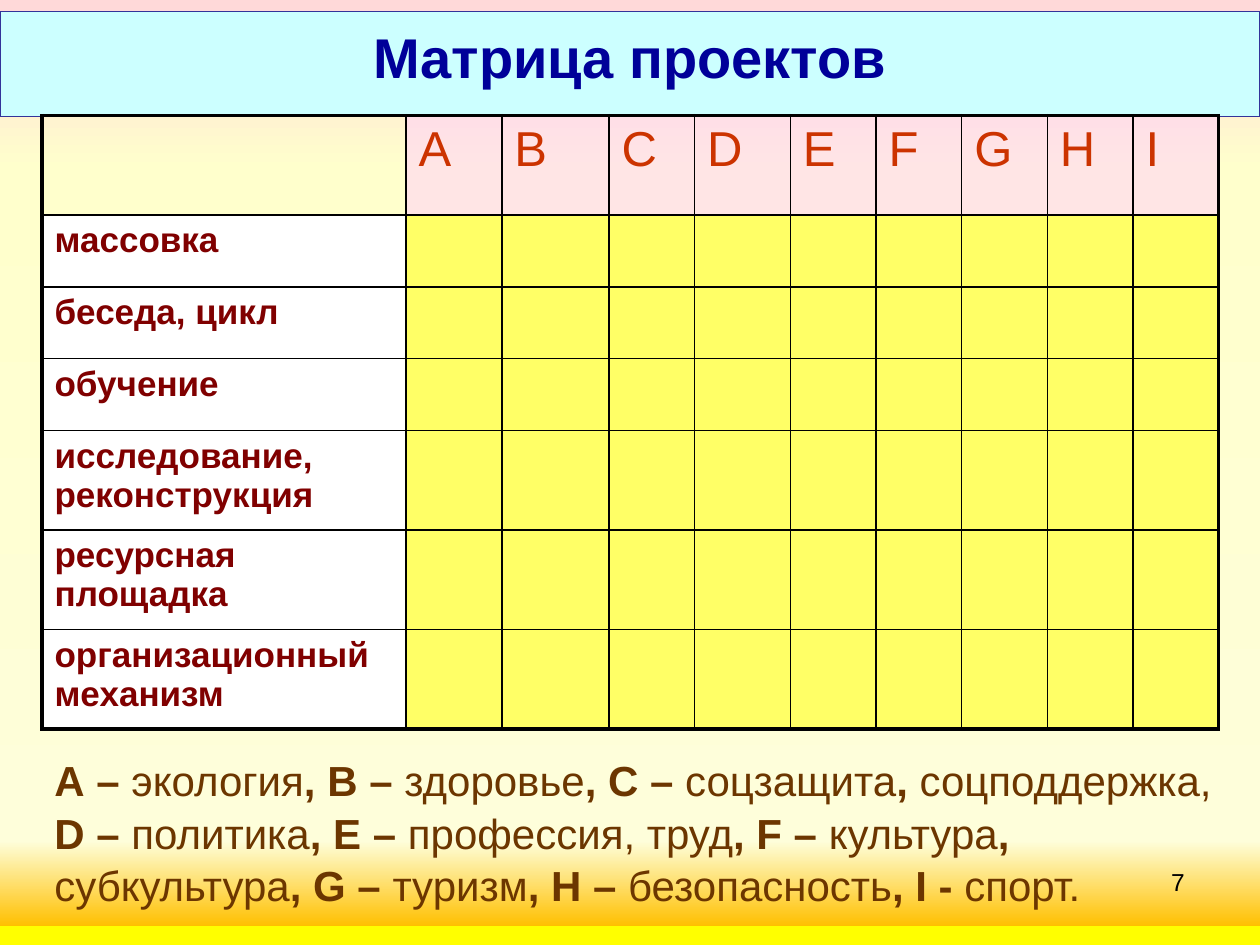
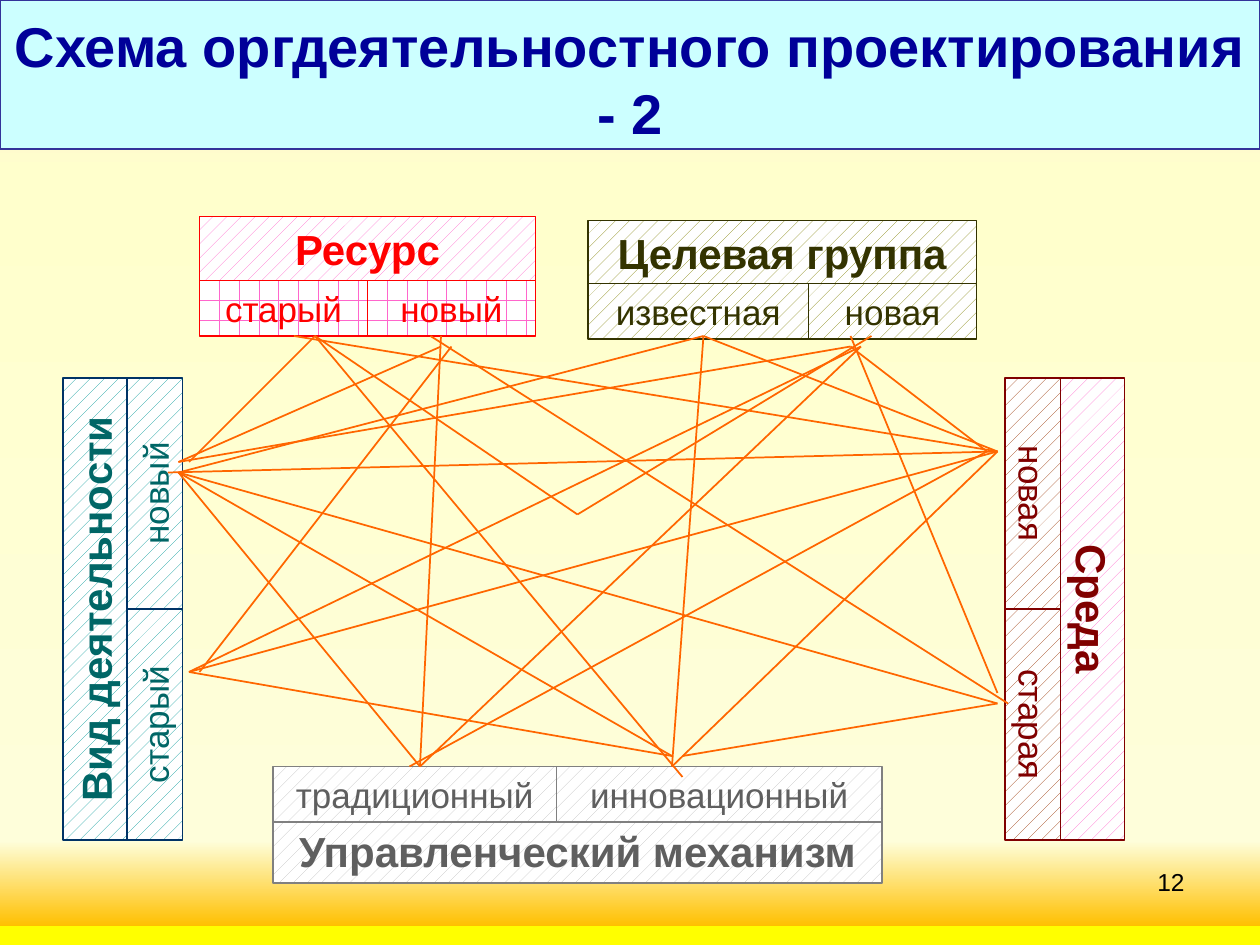
from lxml import etree
from pptx import Presentation
from pptx.dml.color import RGBColor as RGB
from pptx.enum.dml import MSO_PATTERN as PAT
from pptx.enum.shapes import MSO_CONNECTOR as CONN, MSO_SHAPE as SHAPE
from pptx.enum.text import MSO_ANCHOR as ANCHOR, MSO_AUTO_SIZE as AUTO, PP_ALIGN as ALIGN
from pptx.oxml import parse_xml
from pptx.oxml.ns import nsdecls, qn
from pptx.util import Inches, Pt

# Colours
WHITE, BLACK = RGB(0xFF, 0xFF, 0xFF), RGB(0, 0, 0)
CYAN, INDIGO, NAVY = RGB(0xCC, 0xFF, 0xFF), RGB(0x33, 0x33, 0x99), RGB(0, 0, 0x99)
PINK, YELLOW = RGB(0xFF, 0xCC, 0xFF), RGB(0xFF, 0xFF, 0x66)
RUST, MAROON, BROWN = RGB(0xCC, 0x33, 0), RGB(0x80, 0, 0), RGB(0x6C, 0x36, 0)
RED, ROSE, ORANGE = RGB(0xFF, 0, 0), RGB(0xFF, 0x66, 0xCC), RGB(0xFF, 0x66, 0)
OLIVE, DARK_OLIVE = RGB(0x80, 0x80, 0), RGB(0x33, 0x33, 0)
TEAL, DARK_TEAL, BLUE = RGB(0, 0x99, 0x99), RGB(0, 0x66, 0x66), RGB(0, 0x33, 0x66)
SIENNA = RGB(0x99, 0x33, 0)
SILVER, GRAY, DARK_GRAY = RGB(0xC0, 0xC0, 0xC0), RGB(0x80, 0x80, 0x80), RGB(0x5F, 0x5F, 0x5F)
BG_STOPS = [(1, "FFD9D9"), (18, "FFFFCC"), (89, "FEFEDA"), (98, "FFC000"), (98, "FFFF00")]

prs = Presentation()
prs.slide_width, prs.slide_height = Inches(10), Inches(7.5)
U = prs.slide_width / 120  # grid of 120 columns by 90 rows


def grid(*units):
    return [round(u * U) for u in units]


def style(p, size, color, bold=False, align=ALIGN.LEFT):
    p.alignment = align
    for r in p.runs:
        r.font.name, r.font.size, r.font.bold = "Arial", Pt(size), bold
        r.font.color.rgb = color


# Shared background
fill = prs.slide_master.background.fill
fill.gradient()
fill.gradient_angle = 270
stops = "".join(f'<a:gs pos="{pos * 1000}"><a:srgbClr val="{c}"/></a:gs>' for pos, c in BG_STOPS)
gs_list = next(prs.slide_master.element.iter(qn("a:gsLst")))
gs_list.getparent().replace(gs_list, parse_xml(f'<a:gsLst {nsdecls("a")}>{stops}</a:gsLst>'))

# Title bands and slide numbers
slides = []
for title, top, height, number in [
    ("Матрица проектов", 1.1, 10, "7"),
    ("Схема оргдеятельностного проектирования - 2", 0, 14.2, "12"),
]:
    s = prs.slides.add_slide(prs.slide_layouts[5])
    slides.append(s)
    sp = s.shapes.title
    sp.left, sp.top, sp.width, sp.height = grid(0, top, 120, height)
    sp.fill.solid()
    sp.fill.fore_color.rgb = CYAN
    sp.line.color.rgb, sp.line.width = INDIGO, Pt(0.75)
    tf = sp.text_frame
    tf.text = title
    tf.word_wrap, tf.auto_size, tf.vertical_anchor = True, AUTO.NONE, ANCHOR.TOP
    tf.margin_top = Inches(0.09)
    style(tf.paragraphs[0], 32, NAVY, True, ALIGN.CENTER)

    tf = s.shapes.add_textbox(*grid(86, 82, 28, 6.2)).text_frame
    tf.word_wrap = True
    tf.text = number
    style(tf.paragraphs[0], 14, BLACK, align=ALIGN.RIGHT)

matrix, scheme = slides

# Matrix table
kinds = ["массовка", "беседа, цикл", "обучение", "исследование, реконструкция",
         "ресурсная площадка", "организационный механизм"]
col_widths = [2.89, 0.76, 0.85, 0.68, 0.76] + [0.68] * 5
row_heights = [0.79] + [0.57] * 3 + [0.79] * 3
n_rows, n_cols = len(row_heights), len(col_widths)
tbl = matrix.shapes.add_table(n_rows, n_cols, *grid(4, 11, 112, 58.4)).table
tbl.first_row = tbl.horz_banding = False
for col, width in zip(tbl.columns, col_widths):
    col.width = Inches(width)
for row, height in zip(tbl.rows, row_heights):
    row.height = Inches(height)

for i in range(n_rows):
    for j in range(n_cols):
        cell = tbl.cell(i, j)
        tcPr = cell._tc.get_or_add_tcPr()
        outer = {"L": j == 0, "R": j == n_cols - 1, "T": i == 0, "B": i == n_rows - 1}
        for side, is_outer in outer.items():
            width = Pt(2.25 if is_outer else 1)
            tcPr.append(parse_xml(
                f'<a:ln{side} {nsdecls("a")} w="{width}"><a:solidFill>'
                f'<a:srgbClr val="{BLACK}"/></a:solidFill></a:ln{side}>'))
        if i == j == 0:
            cell.fill.background()
            continue
        cell.fill.solid()
        cell.fill.fore_color.rgb = PINK if i == 0 else WHITE if j == 0 else YELLOW
        if i == 0:
            cell.text = "ABCDEFGНI"[j - 1]
            style(cell.text_frame.paragraphs[0], 28, RUST)
            clr = tcPr.find(qn("a:solidFill"))[0]
            etree.SubElement(clr, qn("a:alpha")).set("val", "50000")
        elif j == 0:
            cell.text = kinds[i - 1]
            style(cell.text_frame.paragraphs[0], 20, MAROON, True)

# Legend: bold and regular runs alternate
legend = [
    ["А – ", "экология", ", В – ", "здоровье", ", С – ", "соцзащита", ", ", "соцподдержка,"],
    ["D – ", "политика", ", E – ", "профессия, труд", ", F – ", "культура", ", ", "субкультура",
     ", G – ", "туризм", ", Н – ", "безопасность", ", I - ", "спорт."],
]
tf = matrix.shapes.add_textbox(*grid(4, 71, 113, 15.6)).text_frame
tf.word_wrap = True
for k, parts in enumerate(legend):
    p = tf.add_paragraph() if k else tf.paragraphs[0]
    p.line_spacing = 1.05
    for part in parts:
        p.add_run().text = part
    style(p, 24, BROWN)
    for r in p.runs[::2]:
        r.font.bold = True

# Scheme blocks: a bold head and two halves, as (text, column, row, length)
HEAD, HALF = 6.1, 5.3  # thickness of a head and of a half
P10, DOTS = PAT.PERCENT_10, PAT.DOTTED_GRID
blocks = [
    (0, RED, RED, (P10, ROSE), (DOTS, ROSE),
     [("Ресурс", 19, 20.6, 32), ("старый", 19, 26.7, 16), ("новый", 35, 26.7, 16)]),
    (0, DARK_OLIVE, DARK_OLIVE, (P10, OLIVE), (P10, OLIVE),
     [("Целевая группа", 56, 21, 37), ("известная", 56, 27, 21), ("новая", 77, 27, 16)]),
    (270, BLUE, DARK_TEAL, (P10, TEAL), (P10, TEAL),
     [("Вид деятельности", 6, 36, 44), ("старый", 12.1, 58, 22), ("новый", 12.1, 36, 22)]),
    (90, MAROON, MAROON, (P10, ROSE), (P10, SIENNA),
     [("Среда", 101, 36, 44), ("старая", 95.7, 58, 22), ("новая", 95.7, 36, 22)]),
    (0, GRAY, DARK_GRAY, (P10, SILVER), (P10, SILVER),
     [("Управленческий механизм", 26, 78, 58), ("традиционный", 26, 73, 27),
      ("инновационный", 53, 73, 31)]),
]
for rotation, line, color, head_fill, half_fill, boxes in blocks:
    for k, (text, x, y, length) in enumerate(boxes):
        is_head = k == 0
        thick = HEAD if is_head else HALF
        if rotation:  # turn the box about its centre
            x, y = x + (thick - length) / 2, y + (length - thick) / 2
        sp = scheme.shapes.add_shape(SHAPE.RECTANGLE, *grid(x, y, length, thick))
        sp.rotation = rotation
        sp.shadow.inherit = False
        sp.fill.patterned()
        sp.fill.pattern, sp.fill.fore_color.rgb = head_fill if is_head else half_fill
        sp.fill.back_color.rgb = WHITE
        sp.line.color.rgb, sp.line.width = line, Pt(0.75)
        tf = sp.text_frame
        tf.text = text
        tf.word_wrap, tf.vertical_anchor = False, ANCHOR.MIDDLE
        style(tf.paragraphs[0], 24 if is_head else 20, color, is_head, ALIGN.CENTER)

# Links between the halves, as columns and rows of both ends
links = [
    (40, 73, 82, 33), (64, 72, 18, 64), (40, 73, 17, 45), (40, 73, 42, 32), (65, 72, 95, 67),
    (64, 73, 95, 43), (64, 73, 67, 32), (17, 45, 67, 32), (95, 43, 67, 32), (95, 67, 17, 45),
    (96, 67, 41, 32), (95, 43, 28, 32), (65, 74, 30, 32), (18, 44, 30, 32), (55, 49, 30, 32),
    (55, 49, 83, 32), (42, 33, 17, 44), (81, 33, 17, 44), (95, 43, 16, 45), (95, 43, 18, 64),
    (82, 33, 18, 64), (43, 33, 19, 64), (95, 66, 81, 32), (94, 43, 39, 73), (94, 43, 81, 33),
    (64, 72, 17, 45),
]
for ends in links:
    link = scheme.shapes.add_connector(CONN.STRAIGHT, *grid(*ends))
    link.line.color.rgb, link.line.width = ORANGE, Pt(1)
    etree.SubElement(link._element.spPr, qn("a:effectLst"))

prs.save("out.pptx")
